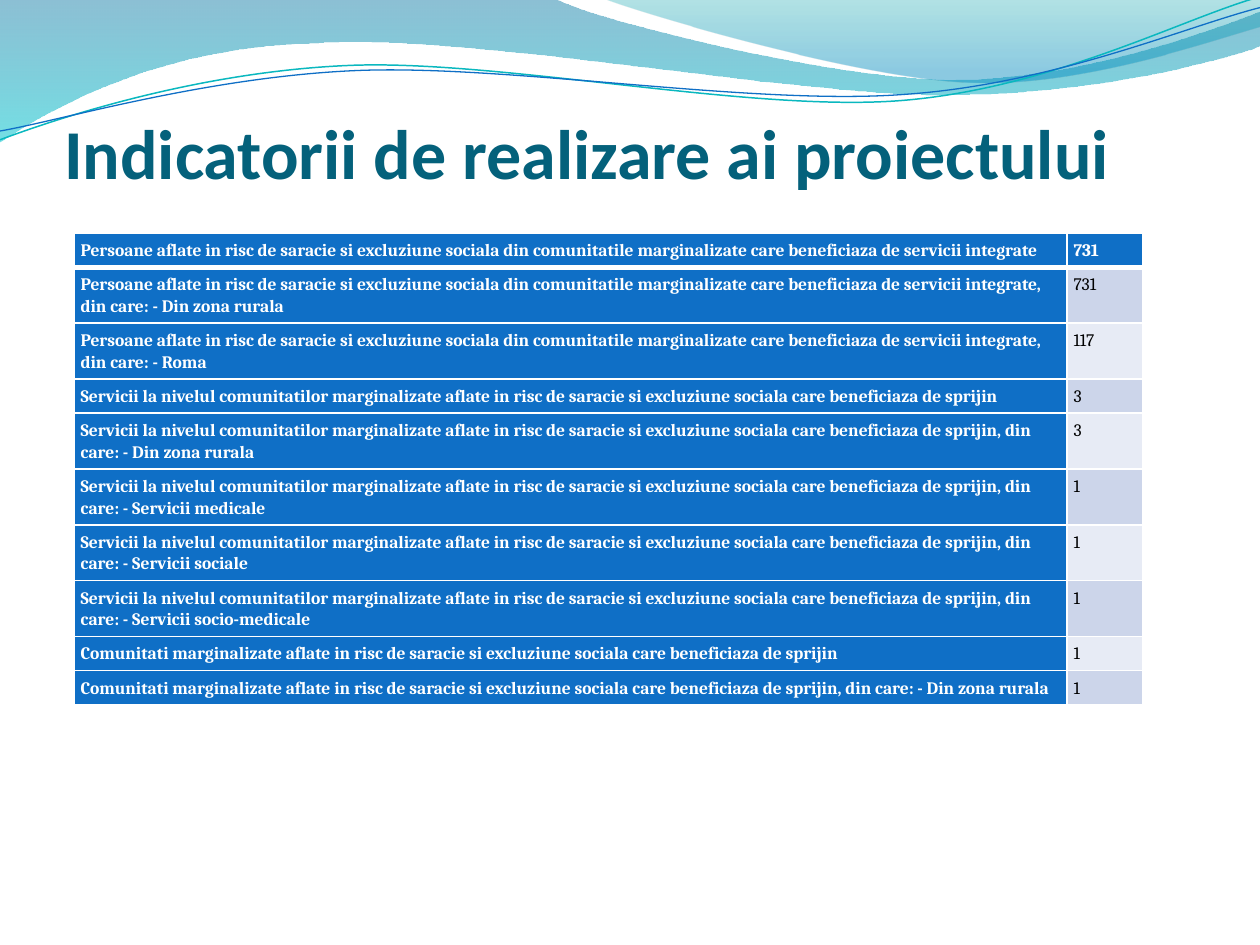
from math import cos, radians, sin

from lxml import etree
from pptx import Presentation
from pptx.dml.color import RGBColor
from pptx.enum.text import MSO_ANCHOR, MSO_AUTO_SIZE, PP_ALIGN
from pptx.oxml.ns import qn
from pptx.util import Inches, Pt

BOTTOM = MSO_ANCHOR.BOTTOM
NO_AUTOFIT = MSO_AUTO_SIZE.NONE
LEFT = PP_ALIGN.LEFT

BLUE, WHITE, BLACK = "0F6FC6", "FFFFFF", "000000"
BANDS = ("CCD5EA", "E7EBF5")
LINE_ROTATION = 357.3

RISK = "in risc de saracie si excluziune sociala"
PEOPLE = (f"Persoane aflate {RISK} din comunitatile marginalizate "
          "care beneficiaza de servicii integrate")
SERVICES = (f"Servicii la nivelul comunitatilor marginalizate aflate {RISK} "
            "care beneficiaza de sprijin")
COMMUNITIES = f"Comunitati marginalizate aflate {RISK} care beneficiaza de sprijin"

INDICATORS = [
    (PEOPLE, "", 731),
    (PEOPLE, "Din zona rurala", 731),
    (PEOPLE, "Roma", 117),
    (SERVICES, "", 3),
    (SERVICES, "Din zona rurala", 3),
    (SERVICES, "Servicii medicale", 1),
    (SERVICES, "Servicii sociale", 1),
    (SERVICES, "Servicii socio-medicale", 1),
    (COMMUNITIES, "", 1),
    (COMMUNITIES, "Din zona rurala", 1),
]

BROAD_WAVE = [
    (0, 0), (4.4, -0.01), (4.76, 0.17, 6.64, 0.63, 7.58, 0.63),
    (8.53, 0.63, 9.58, 0.26, 10, 0.09), (10.01, 0.36),
    (9.83, 0.44, 8.7, 0.76, 7.46, 0.75), (6.22, 0.75, 3.82, 0.28, 2.57, 0.34),
    (1.29, 0.36, 0.46, 0.83, -0.01, 1.13), (0, 0),
]
RIGHT_WAVE = [
    (4.79, -0.01), (5.09, 0.11, 6.82, 0.62, 7.69, 0.65),
    (8.56, 0.69, 9.61, 0.32, 10, 0.21), (10, 0), (4.79, -0.01),
]
TEAL_LINE = [
    (0, 1.11), (0.48, 0.93, 1.58, 0.57, 2.77, 0.52),
    (3.95, 0.47, 5.93, 0.89, 7.13, 0.8), (8.33, 0.71, 9.38, 0.15, 9.98, -0.02),
]
BLUE_LINE = [
    (0, 1.04), (0.47, 0.96, 1.64, 0.61, 2.83, 0.56),
    (4.03, 0.51, 5.97, 0.84, 7.17, 0.75), (8.36, 0.67, 9.41, 0.21, 10, 0.06),
]


def rgb(color):
    """Turn a hex string into a colour."""
    return RGBColor.from_string(color)


def to_local(x, y, box, rotation):
    """Convert a slide point into the unrotated frame of a box."""
    left, top, width, height = box
    angle = radians(-rotation)
    dx, dy = x - left - width / 2, y - top - height / 2
    return (Inches(width / 2 + dx * cos(angle) - dy * sin(angle)),
            Inches(height / 2 + dx * sin(angle) + dy * cos(angle)))


def curve_path(path, segments, box, rotation):
    """Rewrite a path with straight and cubic segments."""
    path.set("w", str(Inches(box[2])))
    path.set("h", str(Inches(box[3])))
    for node in list(path):
        path.remove(node)
    for i, seg in enumerate(segments):
        tag = "moveTo" if i == 0 else "lnTo" if len(seg) == 2 else "cubicBezTo"
        command = etree.SubElement(path, qn(f"a:{tag}"))
        for x, y in zip(seg[::2], seg[1::2]):
            px, py = to_local(x, y, box, rotation)
            etree.SubElement(command, qn("a:pt"), x=str(px), y=str(py))


def add_outline(slide, segments, box, close, rotation=0):
    """Add a curved freeform without shadow in a box."""
    ends = [(Inches(seg[-2]), Inches(seg[-1])) for seg in segments]
    builder = slide.shapes.build_freeform(*ends[0])
    builder.add_line_segments(ends[1:], close=close)
    sp = builder.convert_to_shape()
    sp.left, sp.top, sp.width, sp.height = map(Inches, box)
    sp.rotation = rotation
    sp.shadow.inherit = False
    path = next(sp.element.spPr.iter(qn("a:path")))
    curve_path(path, segments, box, rotation)
    if close:
        etree.SubElement(path, qn("a:close"))
    return sp


def add_wave(slide, segments, box, stops):
    """Add a closed wave with a translucent downward gradient."""
    sp = add_outline(slide, segments, box, True)
    sp.line.fill.background()
    sp.fill.gradient()
    sp.fill.gradient_angle = 270
    for stop, (position, color, _) in zip(sp.fill.gradient_stops, stops):
        stop.position = position
        stop.color.rgb = rgb(color)
    for node, (_, _, opacity) in zip(sp.element.spPr.iter(qn("a:srgbClr")), stops):
        etree.SubElement(node, qn("a:alpha"), val=str(opacity * 1000))


def add_wave_line(slide, segments, box, color, width):
    """Add an open curved line."""
    sp = add_outline(slide, segments, box, False, LINE_ROTATION)
    sp.fill.background()
    sp.line.color.rgb = rgb(color)
    sp.line.width = Pt(width)


def write(tf, text, *, size, font, color, bold=False, spacing=None):
    """Write one formatted paragraph into a text frame."""
    p = tf.paragraphs[0]
    p.alignment = LEFT
    p.line_spacing = spacing
    r = p.add_run()
    r.text = text
    r.font.size = Pt(size)
    r.font.name = font
    r.font.bold = bold
    r.font.color.rgb = rgb(color)


def set_title(slide, text):
    """Place the title above the waves and format it."""
    title = slide.shapes.title
    title.element.getparent().append(title.element)
    title.left, title.top = Inches(0.51), Inches(0.36)
    title.width, title.height = Inches(9.08), Inches(1.18)
    tf = title.text_frame
    tf.margin_left = tf.margin_right = tf.margin_bottom = 0
    tf.margin_top = Inches(0.05)
    tf.vertical_anchor = BOTTOM
    tf.auto_size = NO_AUTOFIT
    tf.word_wrap = True
    write(tf, text, size=40, font="Calibri", color="04617B", bold=True)


def set_borders(cell, top, bottom):
    """Give a cell white borders with the given top and bottom widths."""
    tc_pr = cell._tc.get_or_add_tcPr()
    for side, width in (("L", 1), ("R", 1), ("T", top), ("B", bottom)):
        ln = etree.SubElement(tc_pr, qn(f"a:ln{side}"), w=str(Pt(width)))
        fill = etree.SubElement(ln, qn("a:solidFill"))
        etree.SubElement(fill, qn("a:srgbClr"), val=WHITE)


def fill_cell(cell, text, row, header):
    """Format and write one cell of the indicator table."""
    set_borders(cell, 3 if row == 1 else 1, 3 if row == 0 else 1)
    cell.fill.solid()
    cell.fill.fore_color.rgb = rgb(BLUE if header else BANDS[(row - 1) % 2])
    cell.margin_left = cell.margin_right = Inches(0.05)
    cell.margin_top = cell.margin_bottom = Inches(0.05)
    write(cell.text_frame, text, size=10, font="Cambria", bold=header,
          color=WHITE if header else BLACK, spacing=1.07)


def add_indicators(slide, indicators):
    """Add the table of indicators, with rows as high as their text."""
    frame = slide.shapes.add_table(len(indicators), 2, Inches(0.59), Inches(1.85),
                                   Inches(8.48), Inches(4.16))
    table = frame.table
    table.first_row = table.horz_banding = False
    for column, width in zip(table.columns, (7.88, 0.6)):
        column.width = Inches(width)
    for row, (subject, part, value) in enumerate(indicators):
        label = f"{subject}, din care: - {part}" if part else subject
        table.rows[row].height = 0
        fill_cell(table.cell(row, 0), label, row, True)
        fill_cell(table.cell(row, 1), str(value), row, row == 0)
    frame.height = Inches(4.16)


def main():
    """Build the slide and save it."""
    prs = Presentation()
    prs.slide_width, prs.slide_height = Inches(10), Inches(7.5)
    slide = prs.slides.add_slide(prs.slide_layouts[5])
    add_wave(slide, BROAD_WAVE, (-0.01, -0.01, 10.02, 1.14),
             [(0, "0074A1", 45), (1, "00C6CF", 55)])
    add_wave(slide, RIGHT_WAVE, (4.79, -0.01, 5.21, 0.7),
             [(0, "00A1A9", 30), (0.8, "008BBF", 45)])
    add_wave_line(slide, TEAL_LINE, (-0.02, 0.22, 10.02, 0.71), "0AB8BF", 0.85)
    add_wave_line(slide, BLUE_LINE, (-0.02, 0.3, 10.03, 0.58), BLUE, 0.75)
    set_title(slide, "Indicatorii de realizare ai proiectului")
    add_indicators(slide, INDICATORS)
    prs.save("out.pptx")


if __name__ == "__main__":
    main()
